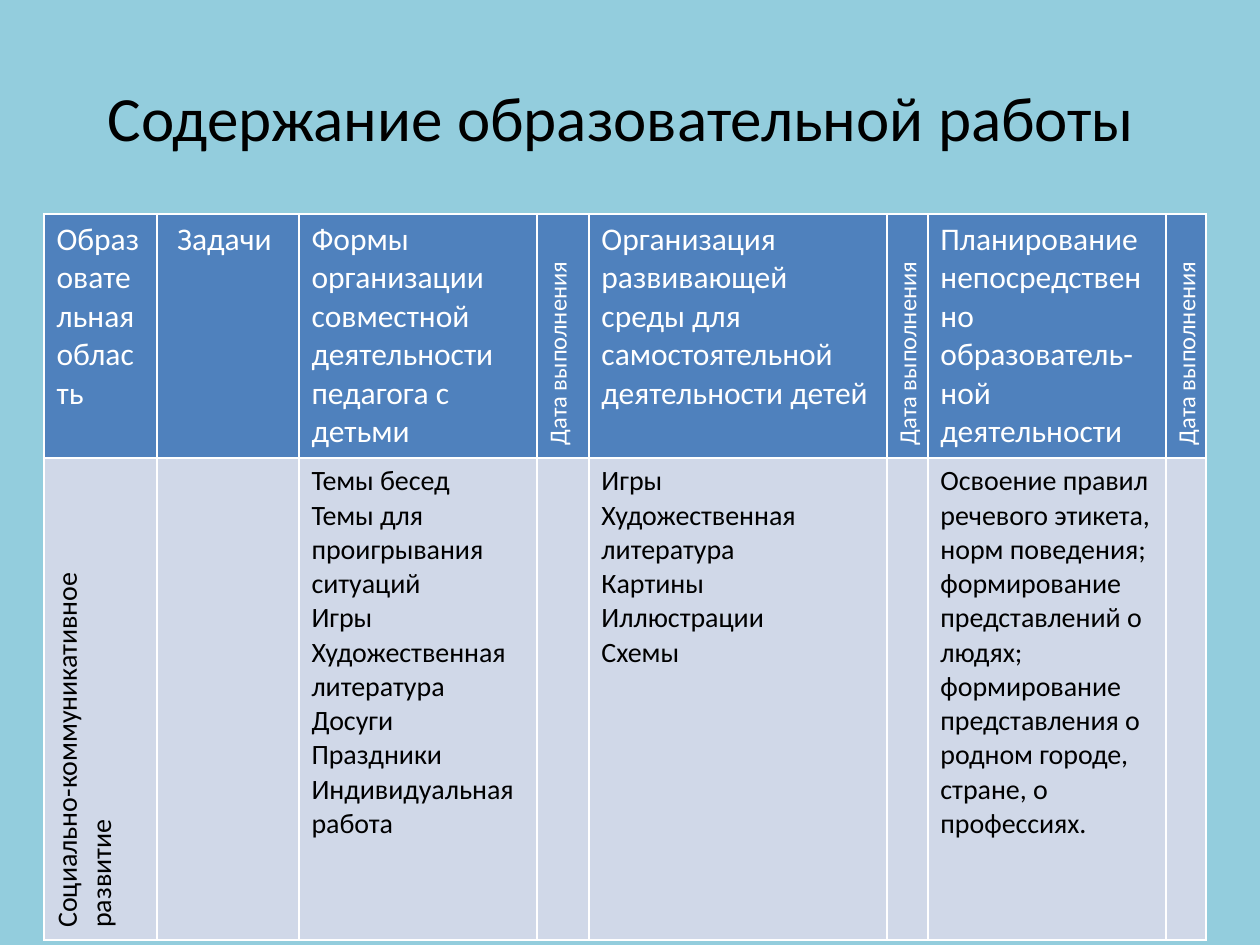
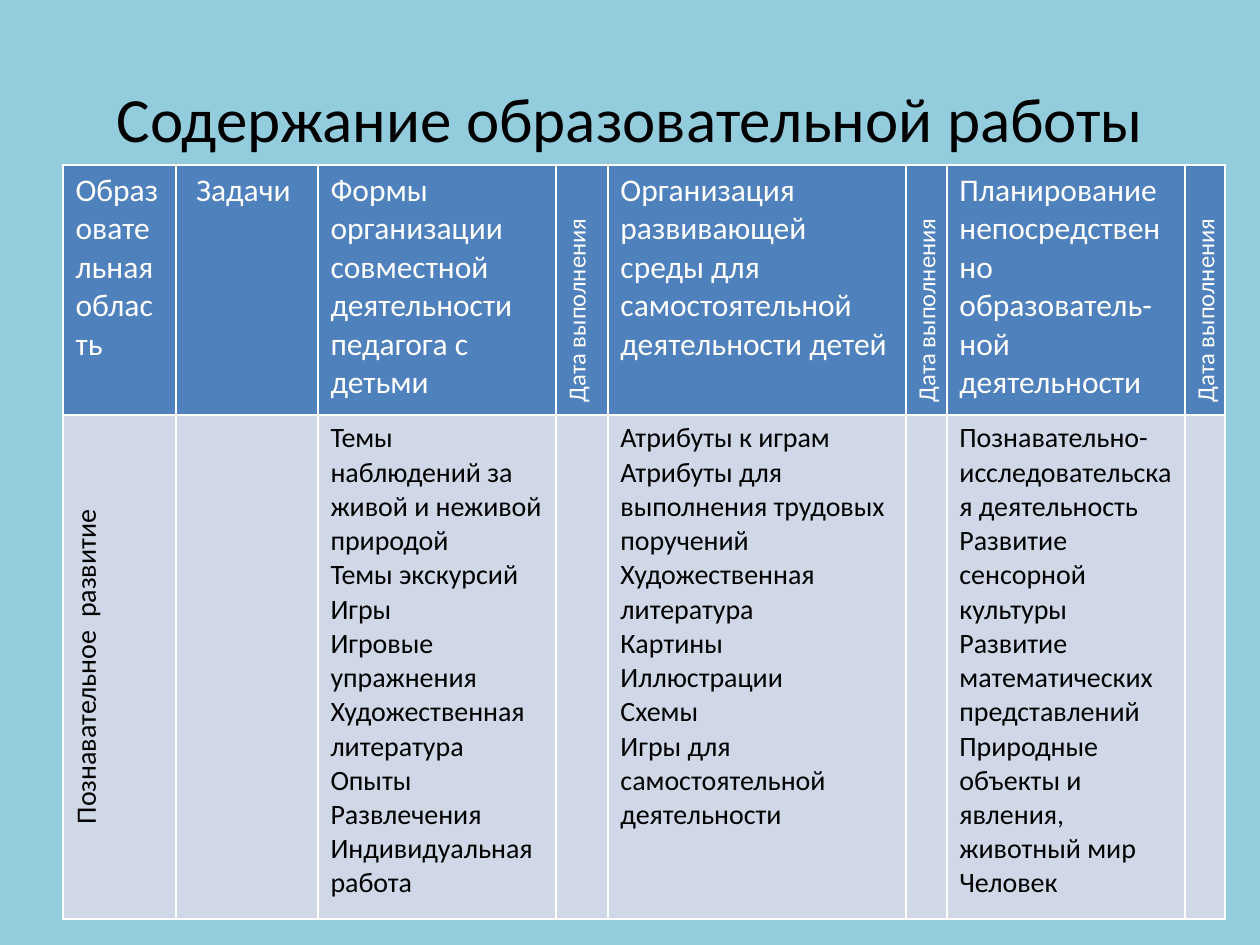
import pptx
import pptx.dml.color
import pptx.enum.text
import pptx.oxml
import pptx.oxml.ns
import pptx.util

PX = 914400 / 126
FONT = "Calibri"
COLORS = {
    "background": "93CDDD",
    "header": "4F81BD",
    "body": "D0D8E8",
    "white": "FFFFFF",
    "black": "000000",
}
TITLE = "Содержание образовательной работы"
DATE = "Дата выполнения"
HEADERS = [
    "Образовательная область",
    "Задачи ",
    "Формы организации совместной деятельности педагога с детьми",
    DATE,
    "Организация развивающей среды для самостоятельной деятельности детей",
    DATE,
    "Планирование непосредственно образователь-ной деятельности",
    DATE,
]
COLUMN_WIDTHS = [113, 142, 238, 52, 298, 41, 238, 40]
AREA_COLUMN, TASKS_COLUMN = 0, 1
FORMS_COLUMN, ENVIRONMENT_COLUMN, PLANNING_COLUMN = 2, 4, 6
LEFT = pptx.enum.text.PP_ALIGN.LEFT
CENTER = pptx.enum.text.PP_ALIGN.CENTER

SLIDES = [
    {
        "title_at": (54, 37),
        "table_at": (44, 214),
        "row_heights": (244, 482),
        "area": "Социально-коммуникативное развитие",
        "area_align": LEFT,
        "forms": [
            "Темы бесед",
            "Темы для проигрывания ситуаций",
            "Игры",
            "Художественная литература",
            "Досуги",
            "Праздники",
            "Индивидуальная работа",
        ],
        "environment": [
            "Игры",
            "Художественная литература",
            "Картины",
            "Иллюстрации",
            "Схемы",
        ],
        "planning": [
            "Освоение правил речевого этикета, норм поведения; "
            "формирование представлений о людях; формирование "
            "представления о родном городе, стране, о профессиях.",
        ],
    },
    {
        "title_at": (63, 38),
        "table_at": (63, 165),
        "row_heights": (250, 504),
        "area": "Познавательное  развитие",
        "area_align": CENTER,
        "forms": [
            "Темы наблюдений за живой и неживой природой",
            "Темы экскурсий",
            "Игры",
            "Игровые упражнения",
            "Художественная литература",
            "Опыты",
            "Развлечения",
            "Индивидуальная работа",
        ],
        "environment": [
            "Атрибуты к играм",
            "Атрибуты для выполнения трудовых поручений",
            "Художественная литература",
            "Картины",
            "Иллюстрации",
            "Схемы",
            "Игры для самостоятельной деятельности",
        ],
        "planning": [
            "Познавательно-исследовательская деятельность",
            "Развитие сенсорной культуры",
            "Развитие математических представлений",
            "Природные объекты и явления, животный мир",
            "Человек",
        ],
    },
]


def px(length):
    return pptx.util.Emu(round(length * PX))


def rgb(name):
    return pptx.dml.color.RGBColor.from_string(COLORS[name])


def set_font(p, size, color):
    p.font.name = FONT
    p.font.size = pptx.util.Pt(size)
    p.font.bold = False
    p.font.color.rgb = rgb(color)


def add_title(s, at):
    sp = s.shapes.title
    sp.left, sp.top = map(px, at)
    sp.width, sp.height = px(1134), px(158)
    tf = sp.text_frame
    tf.text = TITLE
    tf.vertical_anchor = pptx.enum.text.MSO_ANCHOR.MIDDLE
    p = tf.paragraphs[0]
    p.alignment = CENTER
    set_font(p, 36, "black")


def add_borders(cell):
    tc_pr = cell._tc.get_or_add_tcPr()
    for side in "LRTB":
        tc_pr.append(pptx.oxml.parse_xml(
            f'<a:ln{side} {pptx.oxml.ns.nsdecls("a")} w="12700"><a:solidFill>'
            f'<a:srgbClr val="{COLORS["white"]}"/></a:solidFill></a:ln{side}>'))


def fill_cell(cell, lines, size, color, fill, align=LEFT, rotated=False):
    add_borders(cell)
    cell.fill.solid()
    cell.fill.fore_color.rgb = rgb(fill)
    if rotated:
        cell._tc.get_or_add_tcPr().set("vert", "vert270")
    tf = cell.text_frame
    tf.text = "\n".join(lines)
    for p in tf.paragraphs:
        p.alignment = align
        set_font(p, size, color)


def add_plan_table(s, plan):
    left, top = plan["table_at"]
    heights = plan["row_heights"]
    frame = s.shapes.add_table(len(heights), len(HEADERS), px(left), px(top),
                               px(sum(COLUMN_WIDTHS)), px(sum(heights)))
    table = frame.table
    table.horz_banding = False
    for row, height in zip(table.rows, heights):
        row.height = px(height)
    contents = {
        AREA_COLUMN: [plan["area"]],
        FORMS_COLUMN: plan["forms"],
        ENVIRONMENT_COLUMN: plan["environment"],
        PLANNING_COLUMN: plan["planning"],
    }
    for i, (header, width) in enumerate(zip(HEADERS, COLUMN_WIDTHS)):
        table.columns[i].width = px(width)
        is_date = header == DATE
        is_area = i == AREA_COLUMN
        fill_cell(table.cell(0, i), [header], 14 if is_date else 18,
                  "white", "header", CENTER if i == TASKS_COLUMN else LEFT, is_date)
        fill_cell(table.cell(1, i), contents.get(i, []), 16, "black", "body",
                  plan["area_align"] if is_area else LEFT, is_area)


def main():
    prs = pptx.Presentation()
    prs.slide_width, prs.slide_height = px(1260), px(945)
    background = prs.slide_master.background.fill
    background.solid()
    background.fore_color.rgb = rgb("background")
    for plan in SLIDES:
        s = prs.slides.add_slide(prs.slide_layouts.get_by_name("Title Only"))
        add_title(s, plan["title_at"])
        add_plan_table(s, plan)
    prs.save("out.pptx")


if __name__ == "__main__":
    main()
